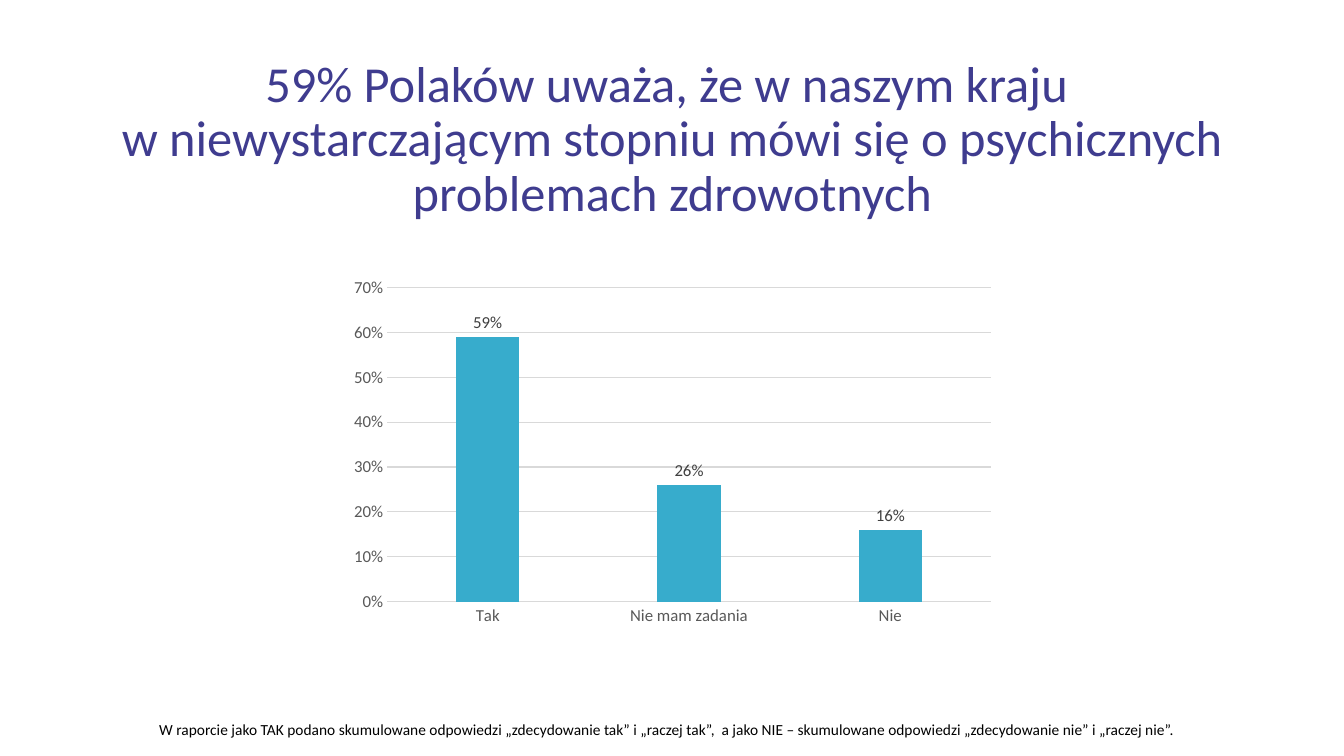
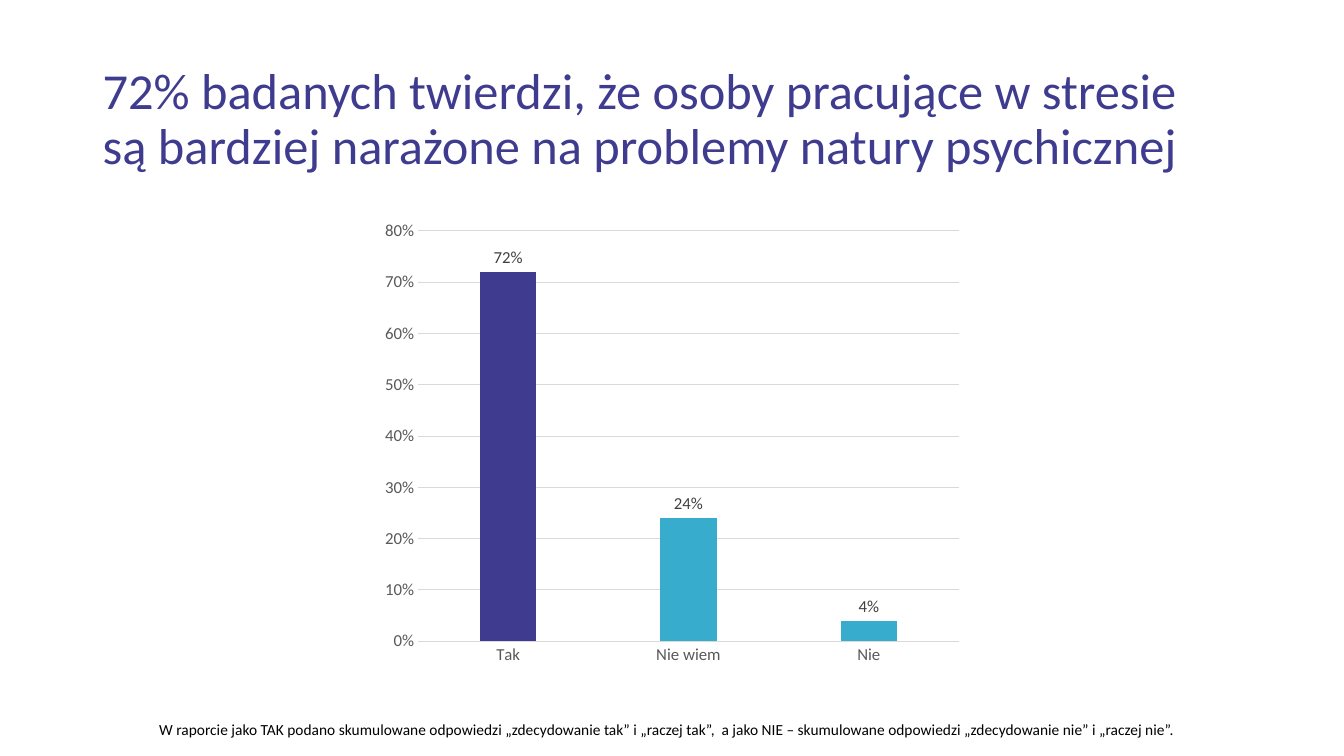
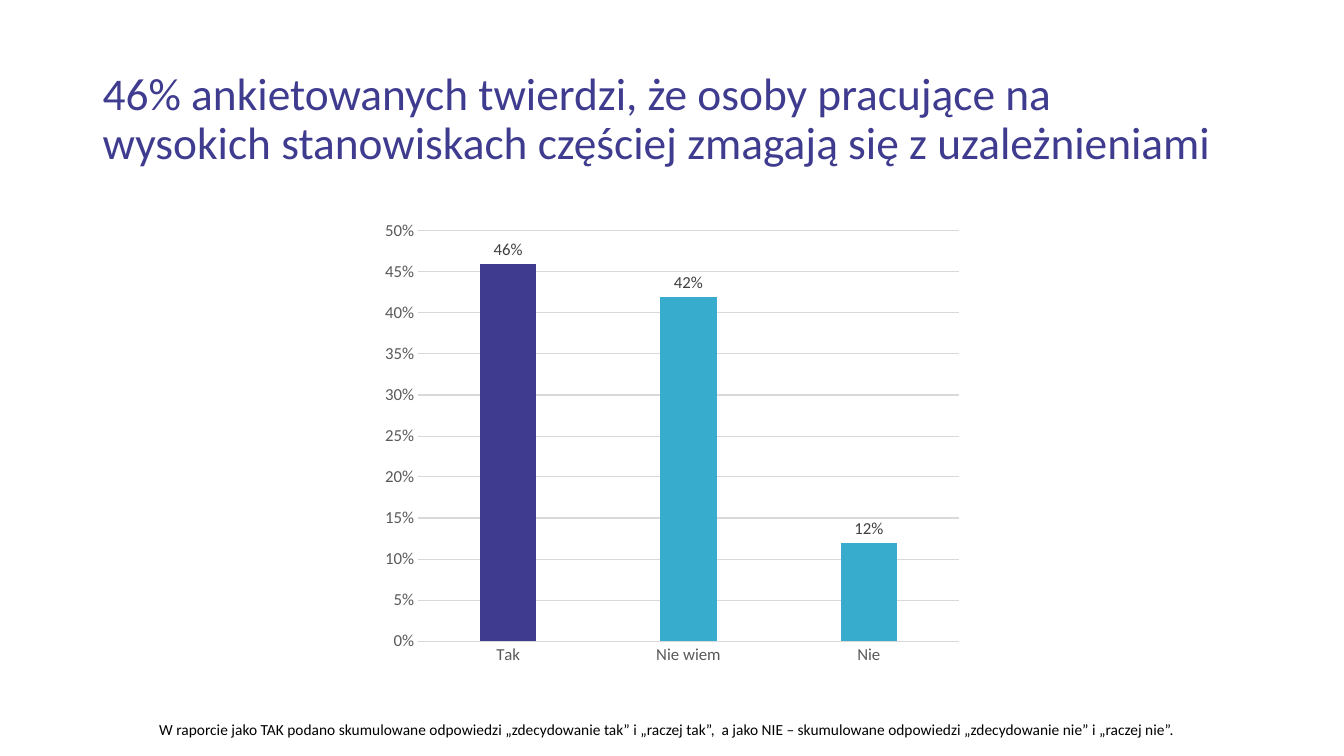
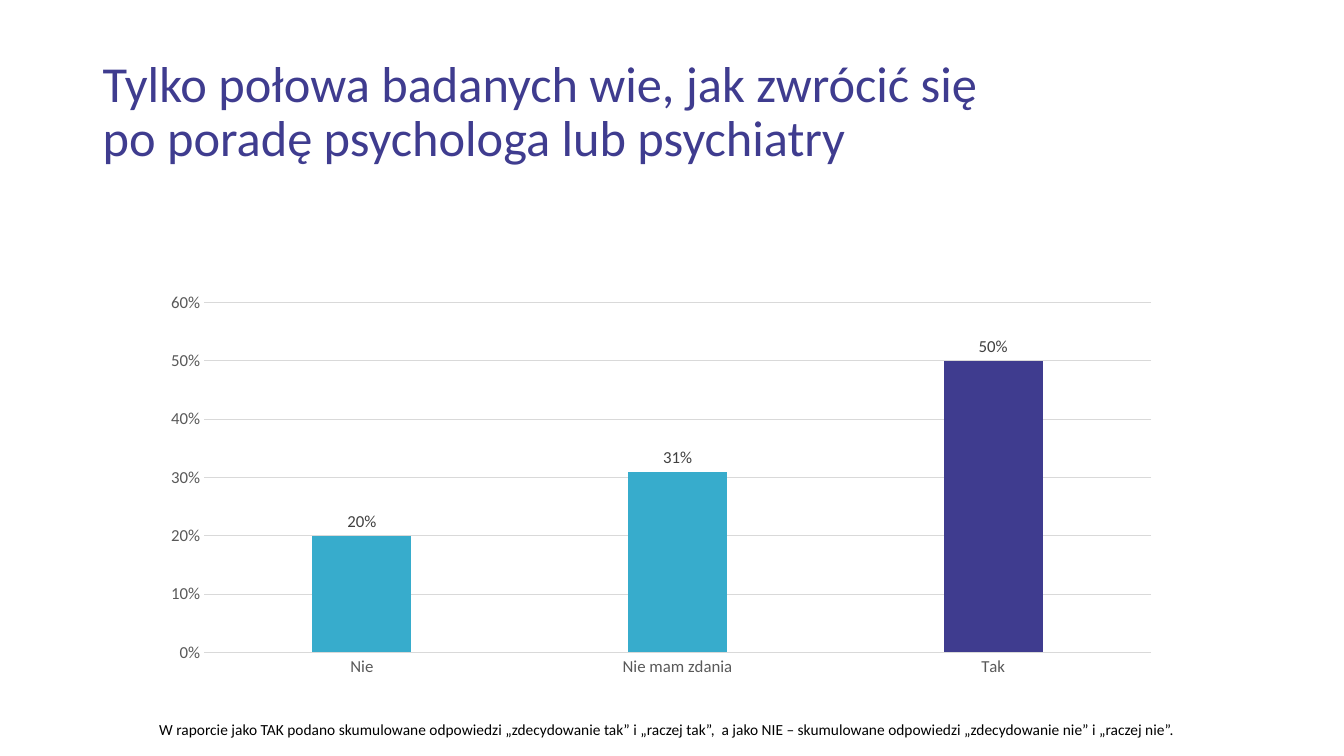
from pptx import Presentation
from pptx.chart.data import CategoryChartData
from pptx.dml.color import RGBColor
from pptx.enum.chart import XL_CHART_TYPE, XL_LABEL_POSITION, XL_TICK_MARK
from pptx.enum.text import MSO_ANCHOR, PP_ALIGN
from pptx.oxml import parse_xml
from pptx.oxml.ns import nsdecls, qn
from pptx.util import Inches, Pt

COLUMNS = XL_CHART_TYPE.COLUMN_CLUSTERED
OUTSIDE_END = XL_LABEL_POSITION.OUTSIDE_END
NO_TICK = XL_TICK_MARK.NONE
MIDDLE = MSO_ANCHOR.MIDDLE
LEFT, CENTER = PP_ALIGN.LEFT, PP_ALIGN.CENTER

FOOTNOTE = ("W raporcie jako TAK podano skumulowane odpowiedzi „zdecydowanie tak” i „raczej tak”,  "
            "a jako NIE – skumulowane odpowiedzi „zdecydowanie nie” i „raczej nie”.")


def rgb(color):
    return RGBColor.from_string(color)


class Deck:
    FONT = "Calibri"
    INDIGO = "3F3C8F"
    TEAL = "37ACCC"
    GRID = "D9D9D9"
    AXIS_TEXT = "595959"
    LABEL_TEXT = "404040"
    BLACK = "000000"

    def __init__(self):
        self.prs = Presentation()
        self.prs.slide_width = Inches(13.33)
        self.prs.slide_height = Inches(7.5)
        self.s = None

    def new_slide(self):
        self.s = self.prs.slides.add_slide(self.prs.slide_layouts[6])

    def style(self, font, size, color):
        font.name = self.FONT
        font.size = Pt(size)
        font.color.rgb = rgb(color)

    def text(self, text, box, size, color, align=LEFT):
        tf = self.s.shapes.add_textbox(*map(Inches, box)).text_frame
        tf.word_wrap = True
        p = tf.paragraphs[0]
        p.text = text
        p.alignment = align
        self.style(p.font, size, color)
        return tf

    def title(self, text, top, size=36, align=LEFT):
        tf = self.text(text, (0.92, top, 11.5, 1.45), size, self.INDIGO, align)
        tf.vertical_anchor = MIDDLE
        tf.paragraphs[0].line_spacing = 0.9

    def footnote(self):
        self.text(FOOTNOTE, (1.48, 7.09, 10.38, 0.29), 11, self.BLACK)

    def grid_line(self, line):
        line.color.rgb = rgb(self.GRID)
        line.width = Pt(0.75)

    def chart(self, box, answers, top_value, step=0.1, highlight=None, inner=None):
        data = CategoryChartData(number_format="0%")
        data.categories = list(answers)
        data.add_series("Series 1", list(answers.values()))
        chart = self.s.shapes.add_chart(COLUMNS, *map(Inches, box), data).chart
        chart.has_title = False
        chart.has_legend = False
        self.style(chart.font, 10, self.BLACK)

        for axis in (chart.category_axis, chart.value_axis):
            axis.major_tick_mark = axis.minor_tick_mark = NO_TICK
            self.style(axis.tick_labels.font, 12, self.AXIS_TEXT)
        self.grid_line(chart.category_axis.format.line)
        values = chart.value_axis
        values.minimum_scale = 0
        values.maximum_scale = top_value
        values.major_unit = step
        values.format.line.fill.background()
        values.tick_labels.number_format = "0%"
        values.tick_labels.number_format_is_linked = False
        self.grid_line(values.major_gridlines.format.line)

        plot = chart.plots[0]
        plot.vary_by_categories = False
        plot.gap_width = 219
        plot.overlap = -27
        series = plot.series[0]
        self.fill(series, self.TEAL)
        if highlight is not None:
            self.fill(series.points[list(answers).index(highlight)], self.INDIGO)
        labels = series.data_labels
        labels.show_value = True
        labels.position = OUTSIDE_END
        labels.number_format = "0%"
        labels.number_format_is_linked = False
        self.style(labels.font, 12, self.LABEL_TEXT)
        if inner:
            self.plot_layout(chart, inner)

    def fill(self, item, color):
        item.format.fill.solid()
        item.format.fill.fore_color.rgb = rgb(color)

    def plot_layout(self, chart, inner):
        area = chart.element.find(".//" + qn("c:plotArea"))
        for layout in area.findall(qn("c:layout")):
            area.remove(layout)
        sizes = "".join(f'<c:{k} val="{v}"/>' for k, v in zip("xywh", inner))
        area.insert(0, parse_xml(
            f'<c:layout {nsdecls("c")}><c:manualLayout><c:layoutTarget val="inner"/>'
            f'<c:xMode val="edge"/><c:yMode val="edge"/>{sizes}</c:manualLayout></c:layout>'))


def main():
    deck = Deck()
    middle_box = (3.7, 2.1, 5.93, 4.59)

    deck.new_slide()
    deck.title("59% Polaków uważa, że w naszym kraju \nw niewystarczającym stopniu mówi się "
               "o psychicznych problemach zdrowotnych", 0.67, align=CENTER)
    deck.chart((3.38, 2.68, 6.58, 3.6),
               {"Tak": 0.59, "Nie mam zadania": 0.26, "Nie": 0.16}, 0.7)
    deck.footnote()

    deck.new_slide()
    deck.title("72% badanych twierdzi, że osoby pracujące w stresie \n"
               "są bardziej narażone na problemy natury psychicznej", 0.47)
    deck.chart(middle_box, {"Tak": 0.72, "Nie wiem": 0.24, "Nie": 0.04}, 0.8, highlight="Tak")
    deck.footnote()

    deck.new_slide()
    deck.title("46% ankietowanych twierdzi, że osoby pracujące na \n"
               "wysokich stanowiskach częściej zmagają się z uzależnieniami", 0.47, size=32.4)
    deck.chart(middle_box, {"Tak": 0.46, "Nie wiem": 0.42, "Nie": 0.12}, 0.5, step=0.05,
               highlight="Tak")
    deck.footnote()

    deck.new_slide()
    deck.title("Tylko połowa badanych wie, jak zwrócić się \n"
               "po poradę psychologa lub psychiatry", 0.4)
    deck.chart((1.62, 2.46, 10.1, 4.51), {"Nie": 0.2, "Nie mam zdania": 0.31, "Tak": 0.5}, 0.6,
               highlight="Tak", inner=(0.04, 0.12, 0.93, 0.77))
    deck.footnote()

    deck.prs.save("out.pptx")


if __name__ == "__main__":
    main()
